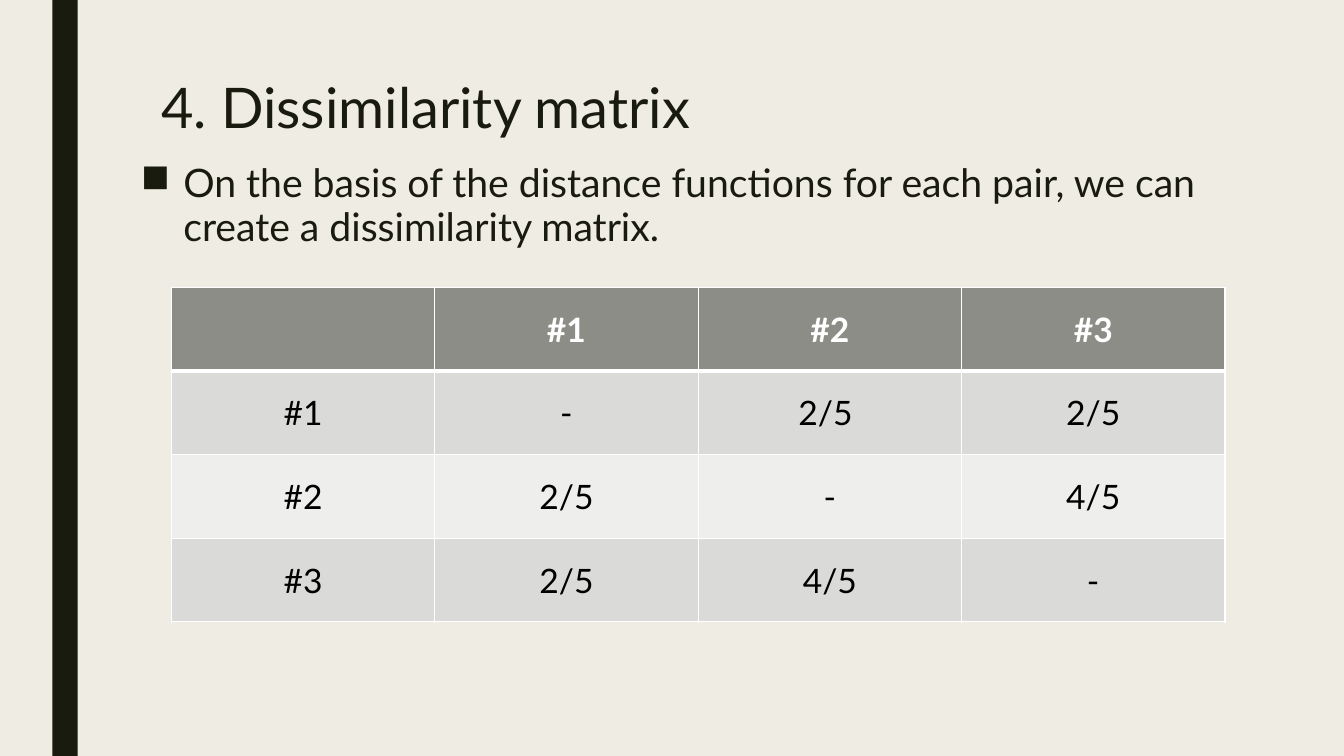
from lxml.etree import SubElement
from pptx import Presentation
from pptx.dml.color import RGBColor
from pptx.enum.shapes import MSO_SHAPE
from pptx.enum.text import MSO_ANCHOR, MSO_AUTO_SIZE, PP_ALIGN
from pptx.oxml.ns import qn
from pptx.util import Inches, Pt

CREAM = RGBColor(0xEF, 0xED, 0xE3)
INK = RGBColor(0x19, 0x1B, 0x0E)
WHITE = RGBColor(0xFF, 0xFF, 0xFF)
BLACK = RGBColor(0, 0, 0)
HEADER_GREY = RGBColor(0x8C, 0x8D, 0x86)
BAND_GREYS = [RGBColor(0xEE, 0xEE, 0xED), RGBColor(0xDA, 0xDB, 0xD9)]

MATRIX = [
    ["", "#1", "#2", "#3"],
    ["#1", "-", "2/5 ", "2/5"],
    ["#2", "2/5", "-", "4/5"],
    ["#3", "2/5", "4/5", "-"],
]


def set_all(target, values):
    for name, value in values.items():
        setattr(target, name, value)


def place(shape, left, top, width, height):
    set_all(shape, {"left": Inches(left), "top": Inches(top),
                    "width": Inches(width), "height": Inches(height)})


def write(frame, text, size, color, bold=False, **paragraph_format):
    """Put one formatted paragraph in a text frame and return it."""
    para = frame.paragraphs[0]
    set_all(para, paragraph_format)
    span = para.add_run()
    span.text = text
    set_all(span.font, {"name": "Lato", "size": Pt(size), "bold": bold})
    span.font.color.rgb = color
    return para


def add_side_bar(page):
    bar = page.shapes.add_shape(MSO_SHAPE.RECTANGLE, Inches(0.52), 0,
                                Inches(0.25), Inches(7.5))
    bar.shadow.inherit = False
    bar.fill.solid()
    bar.fill.fore_color.rgb = INK
    bar.line.fill.background()


def add_title(page, text):
    title = page.shapes.title
    place(title, 1.5, 0.75, 10.5, 1.62)
    set_all(title.text_frame, {"vertical_anchor": MSO_ANCHOR.TOP, "word_wrap": True,
                               "auto_size": MSO_AUTO_SIZE.NONE})
    write(title.text_frame, text, 40, INK,
          alignment=PP_ALIGN.LEFT, line_spacing=0.89)


def add_bullet_text(page, text):
    box = page.shapes.add_textbox(Inches(1.3), Inches(1.56),
                                  Inches(10.91), Inches(5.13))
    box.text_frame.word_wrap = True
    para = write(box.text_frame, text, 28, INK, line_spacing=0.94,
                 space_before=Pt(10), space_after=Pt(2))
    # Square bullet with a hanging indent
    properties = para._p.get_or_add_pPr()
    properties.set("marL", str(Inches(0.42)))
    properties.set("indent", str(Inches(-0.42)))
    SubElement(properties, qn("a:buChar"), char="■")


def set_borders(cell, widths):
    """Draw white borders; the fill must be set afterwards."""
    properties = cell._tc.get_or_add_tcPr()
    for side, width in widths.items():
        line = SubElement(properties, qn(f"a:{side}"), w=str(Pt(width)))
        fill = SubElement(line, qn("a:solidFill"))
        SubElement(fill, qn("a:srgbClr"), val=str(WHITE))


def add_matrix(page, rows):
    frame = page.shapes.add_table(len(rows), len(rows[0]), Inches(1.7),
                                  Inches(2.85), Inches(10.45), Inches(3.32))
    for row_index, row in enumerate(rows):
        is_header = row_index == 0
        for column_index, text in enumerate(row):
            cell = frame.table.cell(row_index, column_index)
            cell.vertical_anchor = MSO_ANCHOR.MIDDLE
            set_borders(cell, {"lnL": 1, "lnR": 1,
                               "lnT": 3 if row_index == 1 else 1,
                               "lnB": 3 if is_header else 1})
            cell.fill.solid()
            cell.fill.fore_color.rgb = (
                HEADER_GREY if is_header else BAND_GREYS[row_index % 2])
            if text:
                write(cell.text_frame, text, 24, WHITE if is_header else BLACK,
                      is_header, alignment=PP_ALIGN.CENTER)


def main():
    deck = Presentation()
    set_all(deck, {"slide_width": Inches(13.33), "slide_height": Inches(7.5)})
    page = deck.slides.add_slide(deck.slide_layouts[5])
    page.background.fill.solid()
    page.background.fill.fore_color.rgb = CREAM

    add_side_bar(page)
    add_title(page, "4. Dissimilarity matrix")
    add_bullet_text(page, "On the basis of the distance functions for each pair, "
                          "we can create a dissimilarity matrix.")
    add_matrix(page, MATRIX)
    deck.save("out.pptx")


if __name__ == "__main__":
    main()
